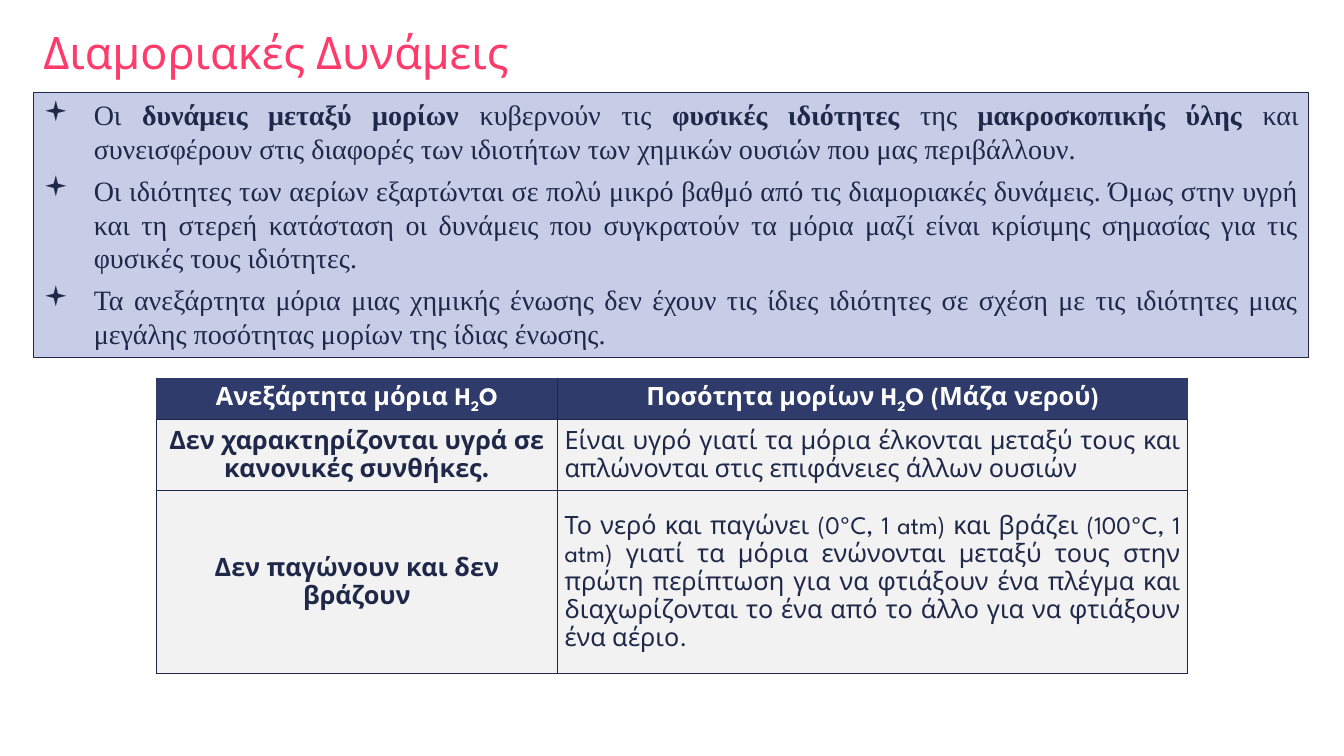
from lxml.etree import SubElement
from pptx import Presentation
from pptx.dml.color import RGBColor
from pptx.enum.text import MSO_ANCHOR, MSO_AUTO_SIZE, PP_ALIGN
from pptx.oxml import parse_xml
from pptx.oxml.ns import nsdecls, qn
from pptx.util import Inches, Pt

W, H = 13.33, 7.5
PINK, NAVY, INK, LILAC, GREY, WHITE = "FF3B6B", "2E3B6B", "202849", "C7CDE6", "F2F2F2", "FFFFFF"
HEAD_FONT, BODY_FONT = "League Spartan", "Times New Roman"
MARGIN, CONTENT_W = 0.33, 12.65

TITLE = "Διαμοριακές Δυνάμεις"
# Odd pieces of each bullet are bold
BULLETS = [
    ["Οι ", "δυνάμεις μεταξύ μορίων ", "κυβερνούν τις ", "φυσικές ιδιότητες ", "της ",
     "μακροσκοπικής ύλης ",
     "και συνεισφέρουν στις διαφορές των ιδιοτήτων των χημικών ουσιών που μας περιβάλλουν."],
    ["Οι ιδιότητες των αερίων εξαρτώνται σε πολύ μικρό βαθμό από τις διαμοριακές δυνάμεις. "
     "Όμως στην υγρή και τη στερεή κατάσταση οι δυνάμεις που συγκρατούν τα μόρια μαζί είναι "
     "κρίσιμης σημασίας για τις φυσικές τους ιδιότητες."],
    ["Τα ανεξάρτητα μόρια μιας χημικής ένωσης δεν έχουν τις ίδιες ιδιότητες σε σχέση με τις "
     "ιδιότητες μιας μεγάλης ποσότητας μορίων της ίδιας ένωσης."],
]
# Odd pieces of each cell are subscripts
ROWS = [
    [["Ανεξάρτητα μόρια H", "2", "O"], ["Ποσότητα μορίων H", "2", "O (Μάζα νερού)"]],
    [["Δεν χαρακτηρίζονται υγρά σε κανονικές συνθήκες."],
     ["Είναι υγρό γιατί τα μόρια έλκονται μεταξύ τους και απλώνονται στις επιφάνειες "
      "άλλων ουσιών"]],
    [["Δεν παγώνουν και δεν βράζουν"],
     ["Το νερό και παγώνει (0ºC, 1 atm) και βράζει (100ºC, 1 atm) γιατί τα μόρια ενώνονται "
      "μεταξύ τους στην πρώτη περίπτωση για να φτιάξουν ένα πλέγμα και διαχωρίζονται το ένα "
      "από το άλλο για να φτιάξουν ένα αέριο."]],
]
COL_WIDTHS, ROW_HEIGHTS = [3.98, 6.25], [0.41, 0.71, 1.81]


def rgb(value):
    return RGBColor.from_string(value)


def set_attrs(obj, values):
    for name, value in values.items():
        setattr(obj, name, value)


def place(s, box):
    set_attrs(s, dict(zip(("left", "top", "width", "height"), map(Inches, box))))


def add_run(p, text, font, size, color, bold=False):
    r = p.add_run()
    r.text = text
    set_attrs(r.font, {"name": font, "size": Pt(size), "bold": bold})
    r.font.color.rgb = rgb(color)
    return r


def add_title(slide, box):
    s = slide.shapes.title
    place(s, box)
    tf = s.text_frame
    set_attrs(tf, {"vertical_anchor": MSO_ANCHOR.MIDDLE, "auto_size": MSO_AUTO_SIZE.NONE})
    p = tf.paragraphs[0]
    set_attrs(p, {"alignment": PP_ALIGN.LEFT, "line_spacing": 0.9})
    add_run(p, TITLE, HEAD_FONT, 32, PINK)


def add_bullets(slide, box):
    s = slide.placeholders[1]
    place(s, box)
    s.fill.solid()
    s.fill.fore_color.rgb = rgb(LILAC)
    s.line.color.rgb = rgb(INK)
    s.line.width = Pt(0.75)
    tf = s.text_frame
    set_attrs(tf, {"word_wrap": True, "auto_size": MSO_AUTO_SIZE.NONE,
                   "vertical_anchor": MSO_ANCHOR.TOP})
    for i, pieces in enumerate(BULLETS):
        p = tf.add_paragraph() if i else tf.paragraphs[0]
        set_attrs(p, {"alignment": PP_ALIGN.JUSTIFY, "space_before": Pt(0), "space_after": Pt(6)})
        pPr = p._p.get_or_add_pPr()
        pPr.set("marL", str(Inches(0.5)))
        pPr.set("indent", str(-Inches(0.5)))
        SubElement(pPr, qn("a:buFont"), typeface="Wingdings")
        SubElement(pPr, qn("a:buChar"), char="▪")
        for j, text in enumerate(pieces):
            add_run(p, text, BODY_FONT, 20, INK, bold=j % 2 == 1)


def set_borders(cell, borders):
    tcPr = cell._tc.get_or_add_tcPr()
    for i, side in enumerate("LRTB"):
        color, width = borders.get(side, (INK, 1))
        tcPr.insert(i, parse_xml(
            f'<a:ln{side} {nsdecls("a")} w="{Pt(width)}"><a:solidFill>'
            f'<a:srgbClr val="{color}"/></a:solidFill></a:ln{side}>'))


def add_comparison(slide, left, top):
    shape = slide.shapes.add_table(len(ROWS), len(COL_WIDTHS), Inches(left), Inches(top),
                                   Inches(sum(COL_WIDTHS)), Inches(sum(ROW_HEIGHTS)))
    table = shape.table
    table.horz_banding = False
    for col, width in zip(table.columns, COL_WIDTHS):
        col.width = Inches(width)
    for row, height in zip(table.rows, ROW_HEIGHTS):
        row.height = Inches(height)
    for i, row in enumerate(ROWS):
        for j, pieces in enumerate(row):
            header, cell = i == 0, table.cell(i, j)
            strong = header or j == 0
            set_attrs(cell, {"margin_left": Inches(0.07), "margin_right": Inches(0.07),
                             "margin_top": 0, "margin_bottom": 0,
                             "vertical_anchor": MSO_ANCHOR.MIDDLE})
            cell.fill.solid()
            cell.fill.fore_color.rgb = rgb(NAVY if header else GREY)
            outer = "T" + "LR"[j]
            set_borders(cell, {side: (NAVY, 0.5) for side in outer} if header else {})
            p = cell.text_frame.paragraphs[0]
            set_attrs(p, {"alignment": PP_ALIGN.CENTER if strong else PP_ALIGN.JUSTIFY,
                          "line_spacing": 1.2, "space_after": Pt(6)})
            for k, text in enumerate(pieces):
                r = add_run(p, text, HEAD_FONT, 18, WHITE if header else INK, bold=strong)
                if k % 2:
                    r._r.get_or_add_rPr().set("baseline", "-25000")


def main():
    prs = Presentation()
    prs.slide_width, prs.slide_height = Inches(W), Inches(H)
    slide = prs.slides.add_slide(prs.slide_layouts[1])
    add_title(slide, (MARGIN, 0.17, CONTENT_W, 0.75))
    add_bullets(slide, (MARGIN, 0.92, CONTENT_W, 2.63))
    add_comparison(slide, (W - sum(COL_WIDTHS)) / 2, H / 2)
    prs.save("out.pptx")


if __name__ == "__main__":
    main()
